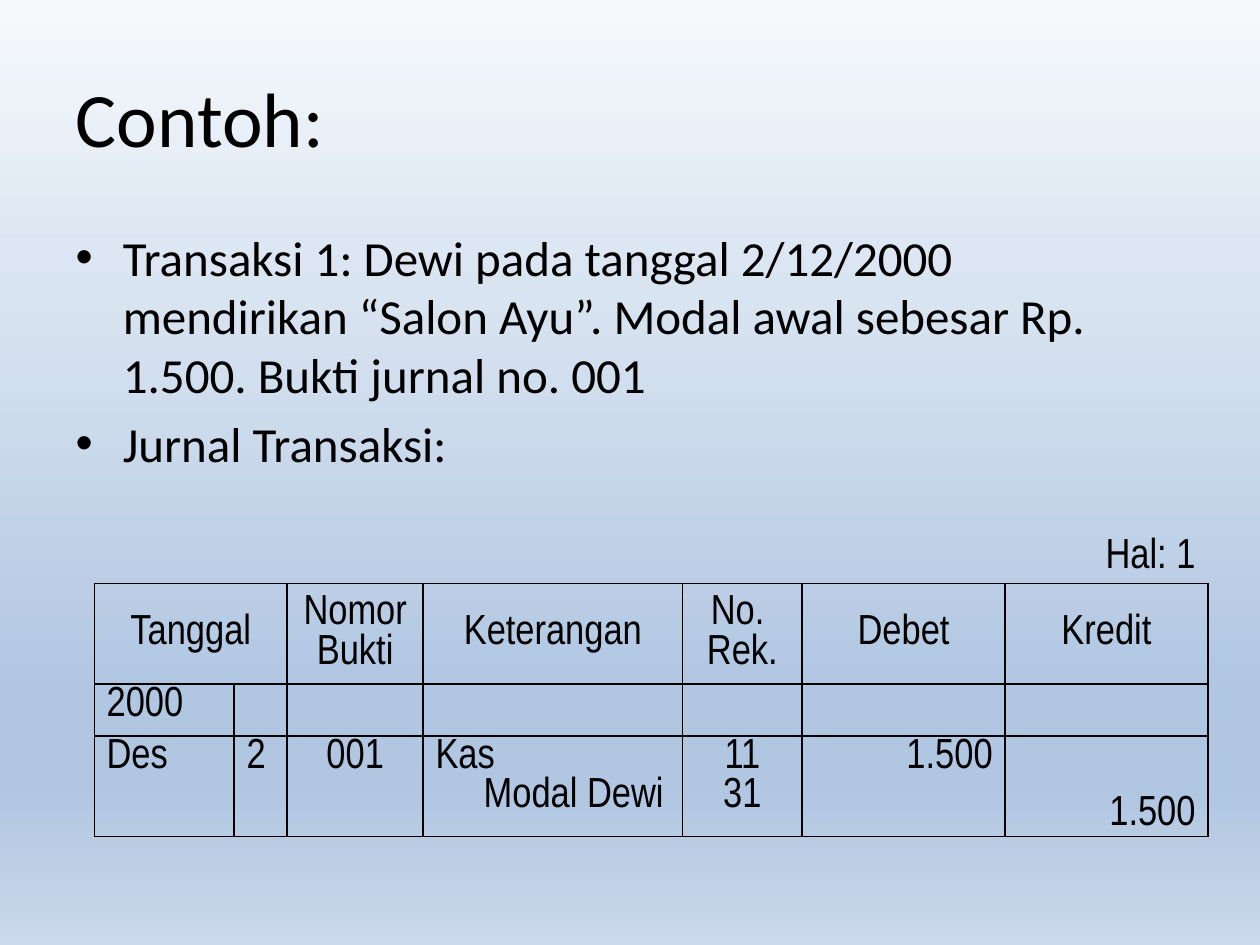
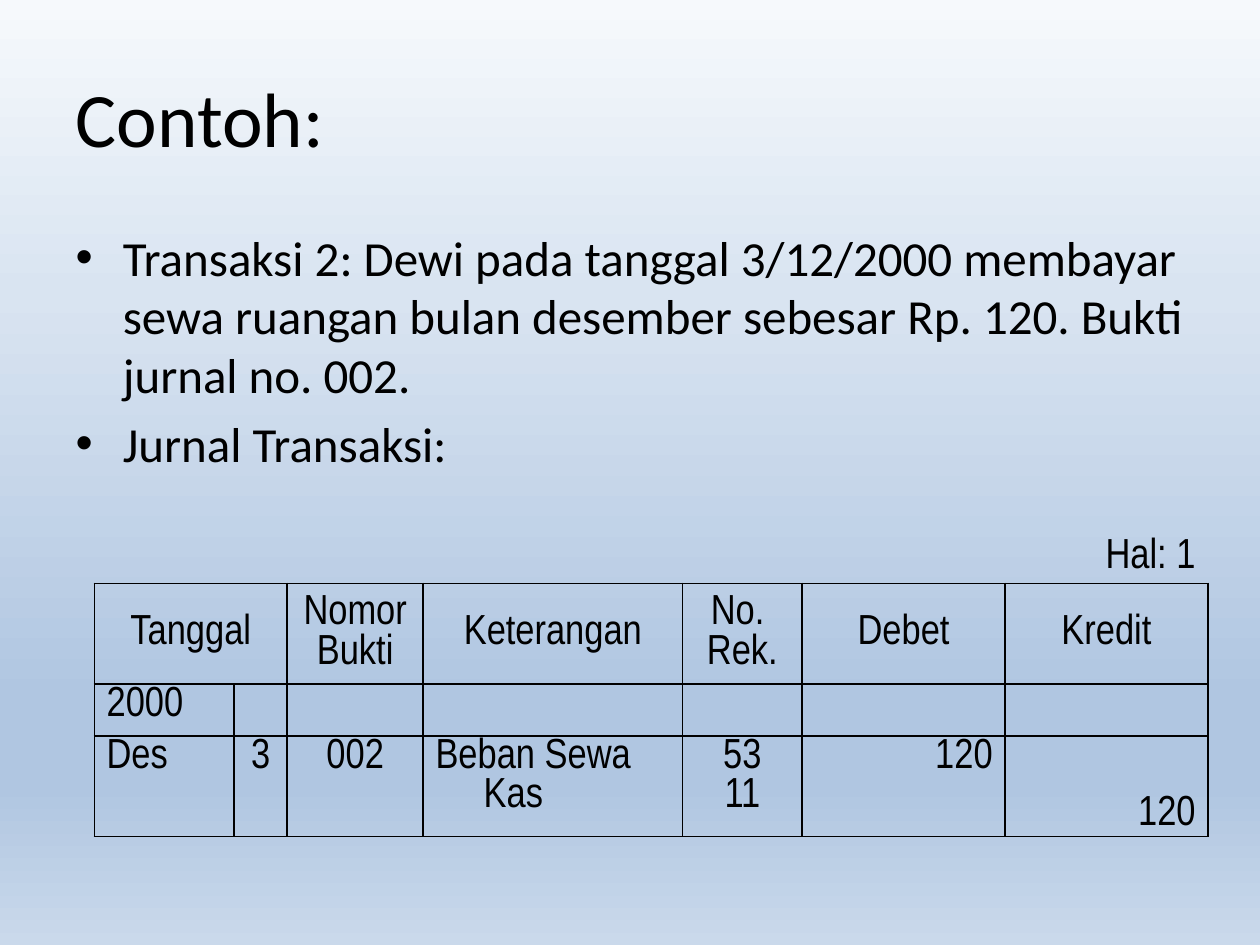
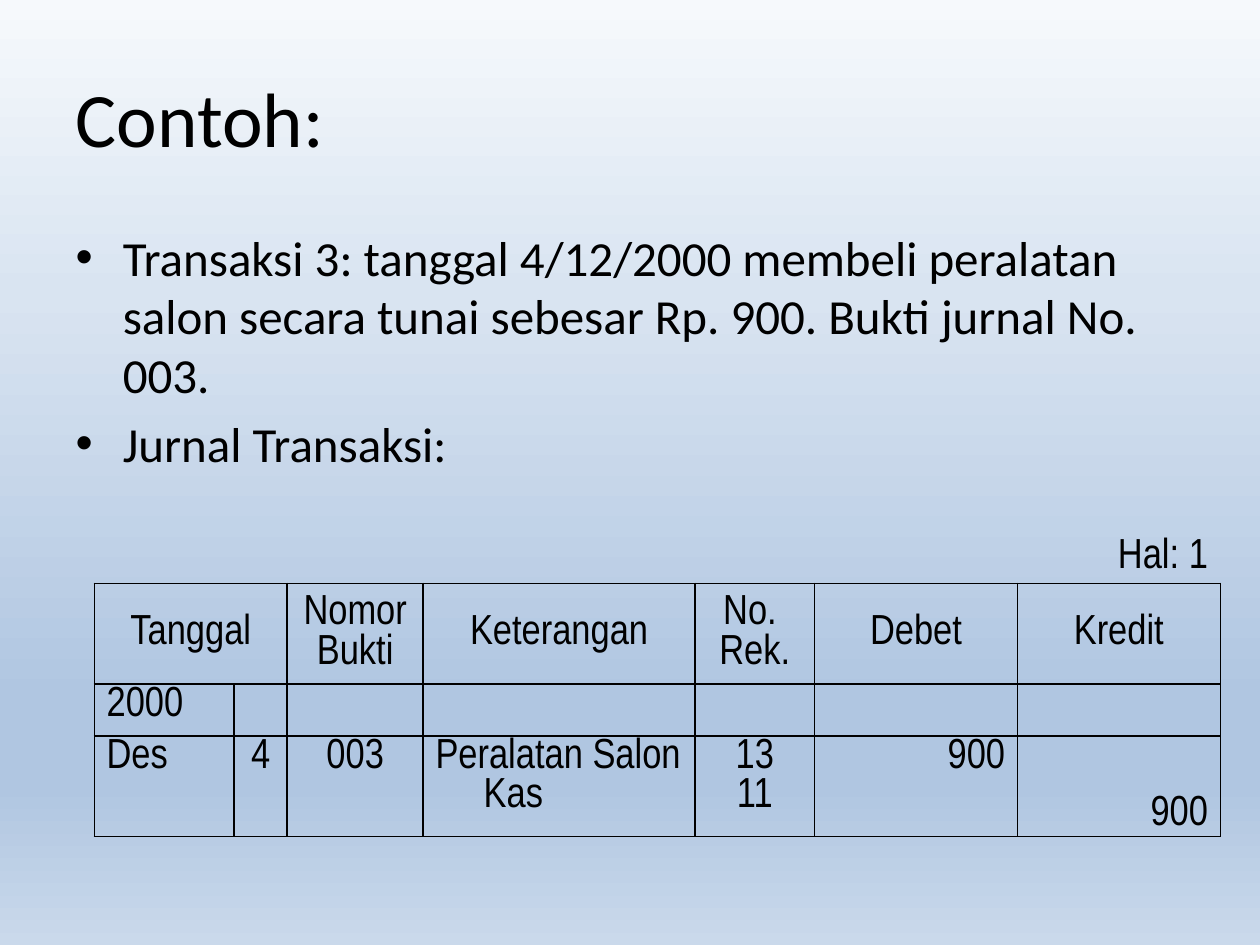
from dataclasses import dataclass

from lxml.etree import SubElement
from pptx import Presentation
from pptx.dml.color import RGBColor
from pptx.enum.text import MSO_ANCHOR, PP_ALIGN
from pptx.oxml.ns import qn
from pptx.util import Cm, Pt


@dataclass(frozen=True)
class Theme:
    ink: str = "000000"
    background: tuple = ((0, "F6F9FC"), (31, "D9E4F1"), (74, "B0C6E1"),
                         (83, "B0C6E1"), (100, "CAD9EB"))
    text_font: str = "Calibri"
    table_font: str = "Arial Narrow"
    title_size: int = 44
    body_size: int = 28
    table_size: int = 24
    border: float = 1


@dataclass(frozen=True)
class Entry:
    story: str
    day: str
    voucher: str
    debit_account: str
    credit_account: str
    account_numbers: str
    amount: str
    day_align: PP_ALIGN = PP_ALIGN.CENTER
    description_width: float = 5.23


THEME = Theme()
LEFT, CENTER, RIGHT = PP_ALIGN.LEFT, PP_ALIGN.CENTER, PP_ALIGN.RIGHT
TITLE_BOX = (1.27, 0.76, 22.86, 3.18)
BODY_BOX = (1.27, 4.45, 22.83, 7.47)
JOURNAL_POSITION = (1.9, 10.72)
ROW_HEIGHTS = (1.04, 2.03, 1.05, 2.02)
CREDIT_INDENT = 0.97
HEADINGS = ("Tanggal", None, "Nomor \nBukti", "Keterangan", "No. \nRek.", "Debet", "Kredit")

ENTRIES = (
    Entry("Transaksi 1: Dewi pada tanggal 2/12/2000 mendirikan “Salon Ayu”. "
          "Modal awal sebesar Rp. 1.500. Bukti jurnal no. 001",
          "2", "001", "Kas", "Modal Dewi", "11\n31", "1.500", day_align=LEFT),
    Entry("Transaksi 2: Dewi pada tanggal 3/12/2000 membayar sewa ruangan "
          "bulan desember sebesar Rp. 120. Bukti jurnal no. 002.",
          "3", "002", "Beban Sewa", "Kas", "53\n11", "120"),
    Entry("Transaksi 3: tanggal 4/12/2000 membeli peralatan salon secara tunai "
          "sebesar Rp. 900. Bukti jurnal No. 003.",
          "4", "003", "Peralatan Salon", "Kas", "13\n11", "900", description_width=5.48),
)


def set_background(master):
    fill = master.background.fill
    fill.gradient()
    fill.gradient_angle = 270
    stops = master.element.find(".//" + qn("p:bg")).find(".//" + qn("a:gsLst"))
    for stop in list(stops):
        stops.remove(stop)
    for percent, color in THEME.background:
        stop = SubElement(stops, qn("a:gs"), pos=str(percent * 1000))
        SubElement(stop, qn("a:srgbClr"), val=color)


def format_text(text_frame, font_name, size, align=LEFT):
    for paragraph in text_frame.paragraphs:
        paragraph.alignment = align
        for run in paragraph.runs:
            run.font.name = font_name
            run.font.size = Pt(size)
            run.font.color.rgb = RGBColor.from_string(THEME.ink)


def fill_placeholder(shape, box, text, size):
    shape.left, shape.top, shape.width, shape.height = map(Cm, box)
    shape.text_frame.text = text
    format_text(shape.text_frame, THEME.text_font, size)


def set_borders(cell, visible_sides):
    properties = cell._tc.get_or_add_tcPr()
    for index, side in enumerate("LRTB"):
        line = SubElement(properties, qn("a:ln" + side), w=str(Pt(THEME.border)))
        properties.insert(index, line)
        if side in visible_sides:
            SubElement(SubElement(line, qn("a:solidFill")), qn("a:srgbClr"), val=THEME.ink)
        else:
            SubElement(line, qn("a:noFill"))


def write_cell(cell, text, align=LEFT, anchor=MSO_ANCHOR.TOP):
    cell.text = text
    cell.vertical_anchor = anchor
    format_text(cell.text_frame, THEME.table_font, THEME.table_size, align)


def add_journal(slide, position, entry):
    """Draw the page number, headings, year and entry rows of the journal."""
    widths = (2.82, 1.07, 2.74, entry.description_width, 2.41, 4.09, 4.09)
    frame = slide.shapes.add_table(len(ROW_HEIGHTS), len(widths), *map(Cm, position),
                                   Cm(sum(widths)), Cm(sum(ROW_HEIGHTS)))
    table = frame.table
    table.first_row = table.horz_banding = False
    for column, width in zip(table.columns, widths):
        column.width = Cm(width)
    for row_index, (row, height) in enumerate(zip(table.rows, ROW_HEIGHTS)):
        row.height = Cm(height)
        for cell in row.cells:
            cell.margin_left = cell.margin_right = Cm(0.25)
            cell.margin_top = cell.margin_bottom = Cm(0.03)
            set_borders(cell, "LRTB" if row_index else "B")
            cell.fill.background()
    for row_index in (0, 1):
        table.cell(row_index, 0).merge(table.cell(row_index, 1))

    write_cell(table.cell(0, 6), "Hal: 1", RIGHT, MSO_ANCHOR.MIDDLE)
    for index, heading in enumerate(HEADINGS):
        if heading:
            write_cell(table.cell(1, index), heading, CENTER, MSO_ANCHOR.MIDDLE)
    write_cell(table.cell(2, 0), "2000")

    accounts = f"{entry.debit_account}\n{entry.credit_account}"
    entry_cells = (("Des", LEFT), (entry.day, entry.day_align), (entry.voucher, CENTER),
                   (accounts, LEFT), (entry.account_numbers, CENTER), (entry.amount, RIGHT))
    for index, (text, align) in enumerate(entry_cells):
        write_cell(table.cell(3, index), text, align)
    write_cell(table.cell(3, 6), entry.amount, RIGHT, MSO_ANCHOR.BOTTOM)
    credit_line = table.cell(3, 3).text_frame.paragraphs[1]
    credit_line._p.get_or_add_pPr().set("marL", str(Cm(CREDIT_INDENT)))


def add_example_slide(presentation, entry):
    slide = presentation.slides.add_slide(presentation.slide_layouts[1])
    fill_placeholder(slide.shapes.title, TITLE_BOX, "Contoh:", THEME.title_size)
    fill_placeholder(slide.placeholders[1], BODY_BOX,
                     f"{entry.story}\nJurnal Transaksi:", THEME.body_size)
    add_journal(slide, JOURNAL_POSITION, entry)


def main():
    presentation = Presentation()
    presentation.slide_width, presentation.slide_height = Cm(25.4), Cm(19.05)
    set_background(presentation.slide_master)
    for entry in ENTRIES:
        add_example_slide(presentation, entry)
    presentation.save("out.pptx")


if __name__ == "__main__":
    main()
